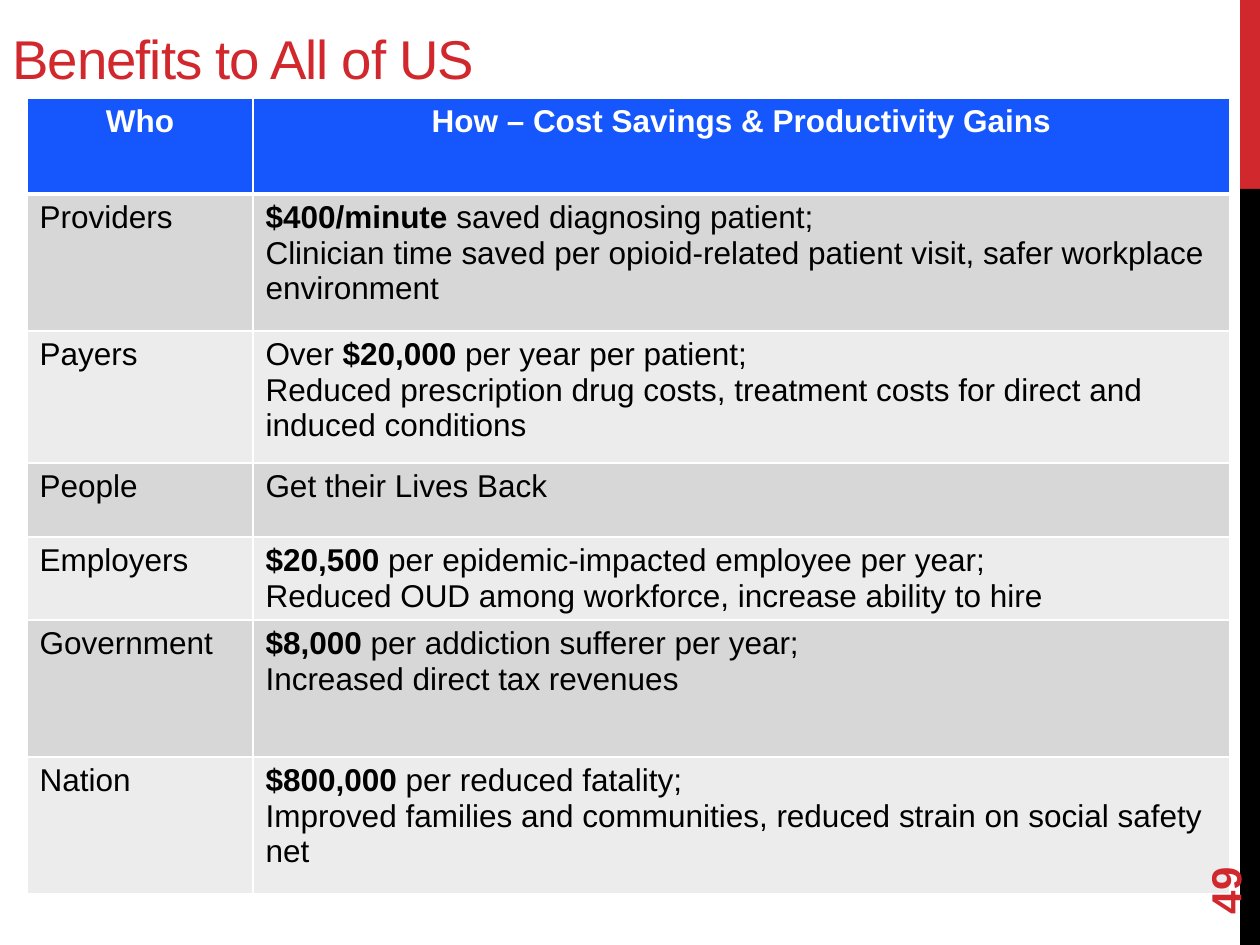
from dataclasses import dataclass

from lxml import etree
from pptx import Presentation
from pptx import util as u
from pptx.dml.color import RGBColor
from pptx.enum import shapes, text
from pptx.oxml.ns import qn

PX_PER_INCH = 126
FONT = "Arial"
RED, BLACK, WHITE, BLUE = "D1282E", "000000", "FFFFFF", "1656FD"
BANDS = ("D7D7D7", "ECECEC")


@dataclass(frozen=True)
class Box:
    left: int
    top: int
    width: int
    height: int

    def emu(self) -> tuple:
        return tuple(px(side) for side in (self.left, self.top, self.width, self.height))


@dataclass(frozen=True)
class Benefit:
    """One table row; gains holds lines, each a list of (words, bold)."""
    who: str
    height: int
    gains: tuple


BENEFITS = (
    Benefit("Providers", 137, (
        [("$400/minute ", True), ("saved diagnosing patient;", False)],
        [("Clinician time saved per opioid-related patient visit, safer workplace environment", False)])),
    Benefit("Payers", 132, (
        [("Over ", False), ("$20,000 ", True), ("per year per patient;", False)],
        [("Reduced prescription drug costs, treatment costs for direct and induced conditions", False)])),
    Benefit("People", 74, ([("Get their Lives Back", False)],)),
    Benefit("Employers", 74, (
        [("$20,500 ", True), ("per epidemic-impacted employee per year;", False)],
        [("Reduced OUD among workforce, increase ability to hire", False)])),
    Benefit("Government", 137, (
        [("$8,000 ", True), ("per addiction sufferer per year;", False)],
        [("Increased direct tax revenues", False)])),
    Benefit("Nation", 137, (
        [("$800,000 ", True), ("per reduced fatality;", False)],
        [("Improved families and communities, reduced strain on social safety net", False)])),
)
HEADINGS = ("Who", "How – Cost Savings & Productivity Gains")
HEADING_HEIGHT = 96
COLUMN_WIDTHS = (226, 977)


def px(length: int) -> u.Emu:
    return u.Emu(round(length * 914400 / PX_PER_INCH))


def color(code: str) -> RGBColor:
    return RGBColor.from_string(code)


def style(run, size: float, code: str, bold: bool = False) -> None:
    run.font.name = FONT
    run.font.size = u.Pt(size)
    run.font.bold = bold
    run.font.color.rgb = color(code)


def add_bar(slide, box: Box, code: str) -> None:
    bar = slide.shapes.add_shape(shapes.MSO_SHAPE.RECTANGLE, *box.emu())
    bar.shadow.inherit = False
    bar.fill.solid()
    bar.fill.fore_color.rgb = color(code)
    bar.line.fill.background()


def add_label(slide, box: Box, words: str, size: float, anchor, bold: bool = False):
    label = slide.shapes.add_textbox(*box.emu())
    frame = label.text_frame
    frame.word_wrap = True
    frame.vertical_anchor = anchor
    frame.text = words
    style(frame.paragraphs[0].runs[0], size, RED, bold)
    return label


def add_borders(cell, top: int = 1, bottom: int = 1) -> None:
    """White borders, with widths in points."""
    properties = cell._tc.get_or_add_tcPr()
    for side, width in (("L", 1), ("R", 1), ("T", top), ("B", bottom)):
        border = etree.SubElement(properties, qn(f"a:ln{side}"), w=str(u.Pt(width)))
        fill = etree.SubElement(border, qn("a:solidFill"))
        etree.SubElement(fill, qn("a:srgbClr"), val=WHITE)


def fill_cell(cell, lines: tuple, fill: str, ink: str, align=None) -> None:
    cell.fill.solid()
    cell.fill.fore_color.rgb = color(fill)
    frame = cell.text_frame
    for index, line in enumerate(lines):
        paragraph = frame.add_paragraph() if index else frame.paragraphs[0]
        paragraph.alignment = align
        for words, bold in line:
            run = paragraph.add_run()
            run.text = words
            style(run, 18, ink, bold)


def add_benefits(slide) -> None:
    heights = [HEADING_HEIGHT] + [benefit.height for benefit in BENEFITS]
    box = Box(27, 98, sum(COLUMN_WIDTHS), sum(heights))
    table = slide.shapes.add_table(len(heights), len(COLUMN_WIDTHS), *box.emu()).table
    for column, width in zip(table.columns, COLUMN_WIDTHS):
        column.width = px(width)
    for row, height in zip(table.rows, heights):
        row.height = px(height)

    for column, heading in enumerate(HEADINGS):
        cell = table.cell(0, column)
        add_borders(cell, bottom=3)
        fill_cell(cell, ([(heading, True)],), BLUE, WHITE, text.PP_ALIGN.CENTER)
    for row, benefit in enumerate(BENEFITS, start=1):
        for column, lines in enumerate((([(benefit.who, False)],), benefit.gains)):
            cell = table.cell(row, column)
            add_borders(cell, top=3 if row == 1 else 1)
            fill_cell(cell, lines, BANDS[(row - 1) % 2], BLACK)


def main() -> None:
    deck = Presentation()
    deck.slide_width, deck.slide_height = u.Inches(10), u.Inches(7.5)
    slide = deck.slides.add_slide(deck.slide_layouts[6])

    add_bar(slide, Box(1240, 0, 20, 189), RED)
    add_bar(slide, Box(1240, 189, 20, 756), BLACK)
    add_benefits(slide)
    page = add_label(slide, Box(1134, 811, 181, 50), "49", 24, text.MSO_ANCHOR.MIDDLE, bold=True)
    page.rotation = 270
    title = add_label(slide, Box(0, 10, 1240, 87), "Benefits to All of US", 31.2, text.MSO_ANCHOR.BOTTOM)
    title.text_frame.paragraphs[0].runs[0].font._element.set("spc", "-60")

    deck.save("out.pptx")


if __name__ == "__main__":
    main()
